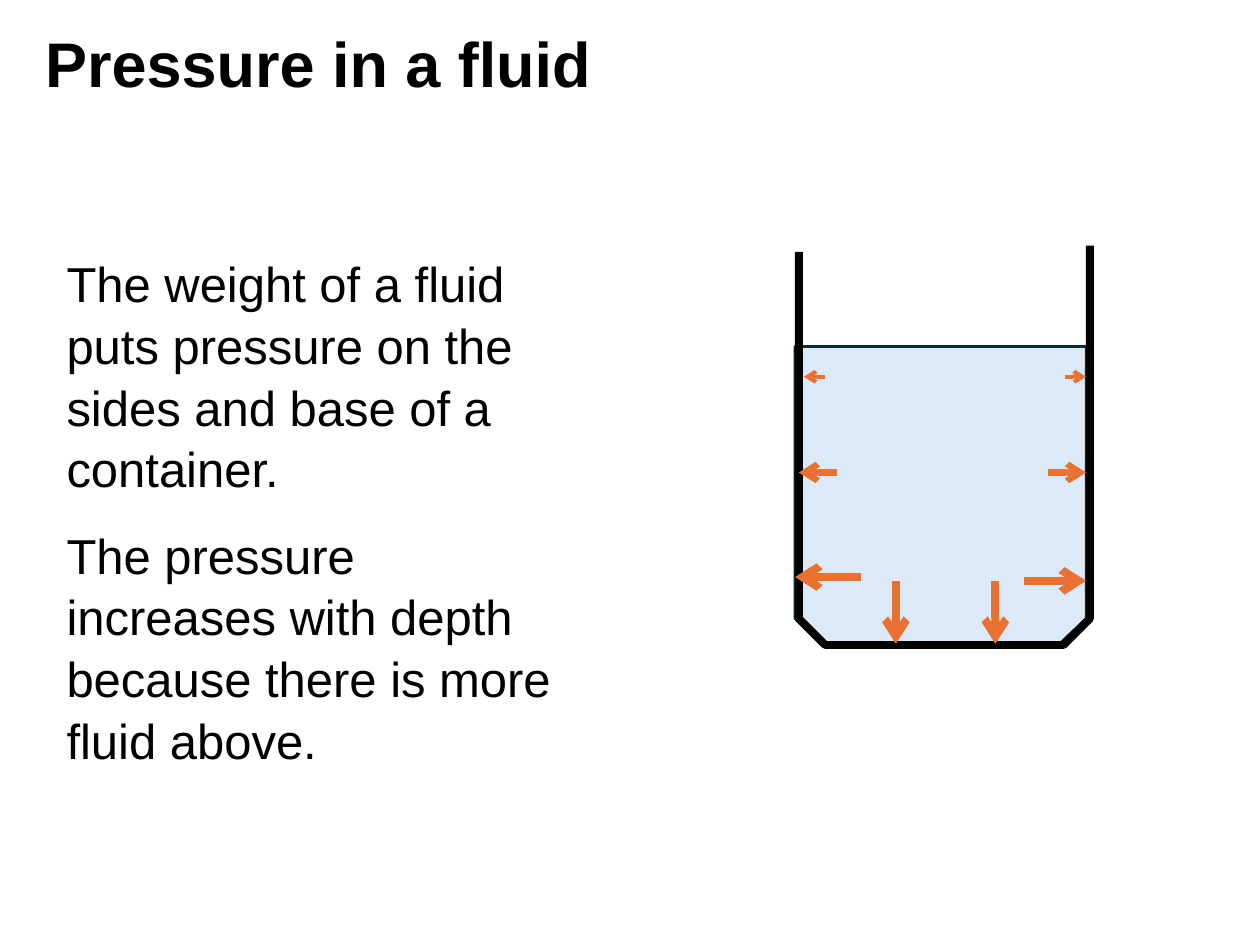
"""Build a slide that explains how pressure in a fluid grows with depth."""
from pptx import Presentation
from pptx import util as u
from pptx.dml.color import RGBColor
from pptx.enum import shapes, text
from pptx.oxml import ns, xmlchemy

BLACK = RGBColor(0x00, 0x00, 0x00)
WATER = RGBColor(0xDC, 0xEA, 0xF7)
WATER_EDGE = RGBColor(0x09, 0x2A, 0x39)
ORANGE = RGBColor(0xE9, 0x71, 0x32)

TITLE = {"size": u.Pt(36), "bold": True, "name": "Arial"}
BODY = {"size": u.Pt(28), "bold": False, "name": "Arial"}

WATER_OUTLINE = [(6.31, 2.75), (8.62, 2.75), (8.62, 4.91),
                 (8.41, 5.11), (6.51, 5.11), (6.31, 4.91)]
CONTAINER_OUTLINE = [(6.34, 2), (6.34, 4.91), (6.55, 5.12),
                     (8.44, 5.12), (8.65, 4.91), (8.65, 1.95)]
PRESSURE_ARROWS = [
    ((8.13, 4.61), (8.62, 4.61), 4.5),
    ((6.83, 4.58), (6.31, 4.58), 4.5),
    ((6.64, 3.75), (6.34, 3.75), 3.5),
    ((8.32, 3.75), (8.62, 3.75), 3.5),
    ((7.11, 4.61), (7.11, 5.11), 4.5),
    ((7.9, 4.61), (7.9, 5.11), 4.5),
    ((8.45, 2.99), (8.62, 2.99), 2.25),
    ((6.55, 2.99), (6.38, 2.99), 2.25),
]


class SlideBuilder:
    def __init__(self, slide):
        self.slide = slide

    def text_box(self, box, paragraphs, font, spacing, anchor):
        shape = self.slide.shapes.add_textbox(*map(u.Inches, box))
        frame = shape.text_frame
        frame.word_wrap = True
        frame.vertical_anchor = anchor
        frame.text = "\n".join(paragraphs)
        for paragraph in frame.paragraphs:
            for name, value in spacing.items():
                setattr(paragraph, name, value)
            for run in paragraph.runs:
                run.font.color.rgb = BLACK
                for name, value in font.items():
                    setattr(run.font, name, value)

    def outline(self, points, color, width, fill=None):
        start, *others = [tuple(map(u.Inches, point)) for point in points]
        builder = self.slide.shapes.build_freeform(*start)
        builder.add_line_segments(others, close=fill is not None)
        shape = builder.convert_to_shape()
        shape.shadow.inherit = False
        if fill is None:
            shape.fill.background()
        else:
            shape.fill.solid()
            shape.fill.fore_color.rgb = fill
        shape.line.color.rgb = color
        shape.line.width = u.Pt(width)

    def arrow(self, start, end, width):
        connector = self.slide.shapes.add_connector(
            shapes.MSO_CONNECTOR.STRAIGHT, *map(u.Inches, start + end))
        connector.line.color.rgb = ORANGE
        connector.line.width = u.Pt(width)
        head = xmlchemy.OxmlElement("a:tailEnd")
        head.set("type", "arrow")
        connector.line._get_or_add_ln().append(head)
        properties = connector._element.find(ns.qn("p:spPr"))
        properties.append(xmlchemy.OxmlElement("a:effectLst"))


def main():
    presentation = Presentation()
    presentation.slide_width = u.Inches(10)
    presentation.slide_height = u.Inches(7.5)
    slide = presentation.slides.add_slide(presentation.slide_layouts[6])
    builder = SlideBuilder(slide)

    builder.text_box(
        (0.43, 1.94, 4.1, 4.11),
        ["The weight of a fluid puts pressure on the sides and base of a container.",
         "The pressure increases with depth because there is more fluid above."],
        BODY, {"line_spacing": 1.05, "space_after": u.Pt(14)}, text.MSO_ANCHOR.TOP)
    builder.outline(WATER_OUTLINE, WATER_EDGE, 1.5, WATER)
    builder.outline(CONTAINER_OUTLINE, BLACK, 4.5)
    for start, end, width in PRESSURE_ARROWS:
        builder.arrow(start, end, width)
    builder.text_box((0.26, 0.17, 9.54, 0.65), ["Pressure in a fluid"],
                     TITLE, {"line_spacing": 1.0}, text.MSO_ANCHOR.MIDDLE)
    presentation.save("out.pptx")


if __name__ == "__main__":
    main()
